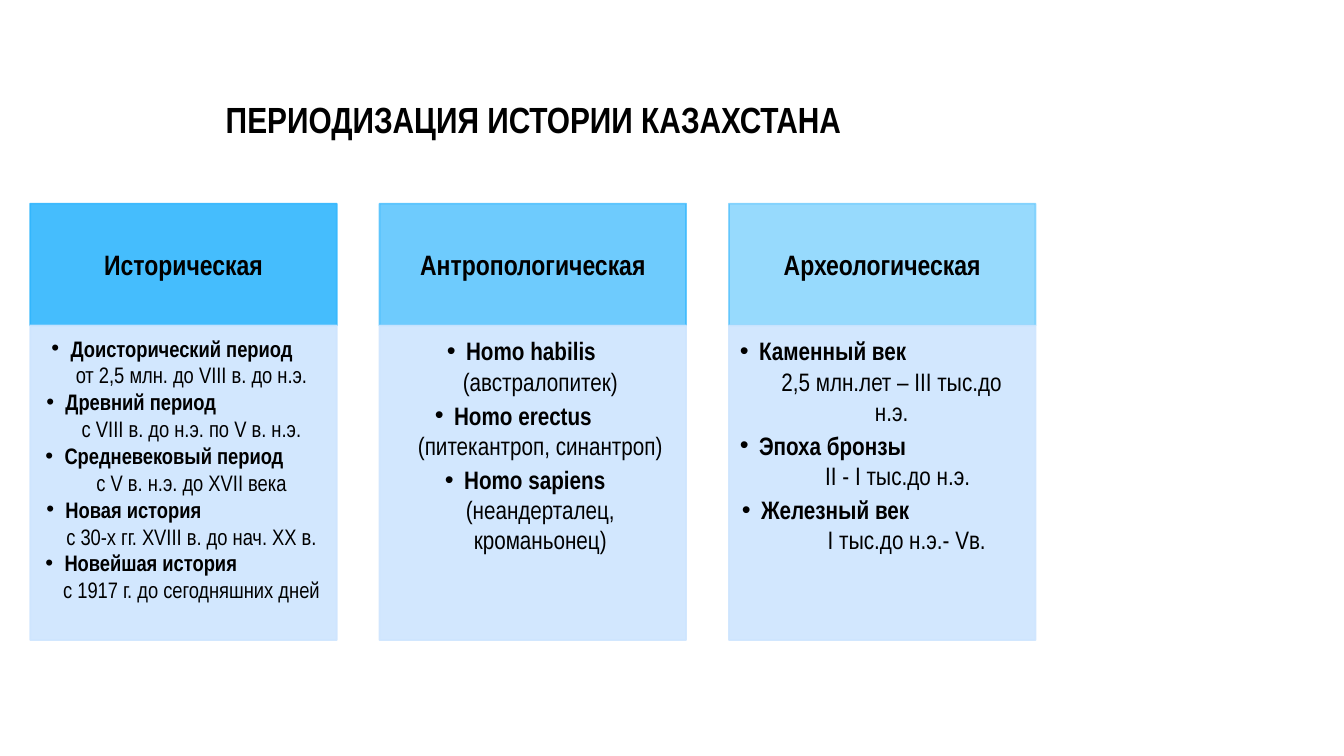
from dataclasses import dataclass

from lxml.etree import SubElement
from pptx import Presentation
from pptx.dml.color import RGBColor
from pptx.enum.shapes import MSO_SHAPE
from pptx.enum.text import MSO_ANCHOR, MSO_AUTO_SIZE, PP_ALIGN
from pptx.oxml.ns import qn
from pptx.util import Inches, Pt

FONT = "Arial Narrow"
COLORS = {"header": "31B6FD", "body": "CEE5FE", "text": "000000"}

# Card grid, in inches
FIRST_LEFT, COLUMN_STEP, CARD_WIDTH = 0.3, 3.465, 3.04
HEADER_TOP, HEADER_HEIGHT = 2.02, 1.21
BODY_HEIGHT = 3.12
BULLET_GAP = 0.19


@dataclass
class Period:
    name: str
    detail: str
    name_left: float  # from the left edge of the card
    detail_shift: float = 0


@dataclass
class Column:
    heading: str
    header_opacity: int
    text_size: int
    space_after: float
    margins: tuple[float, float, float, float]
    periods: list[Period]


COLUMNS = [
    Column("Историческая", 90, 16, 0, (0.09, 0.09, 0.12, 0.14), [
        Period("Доисторический период", "от 2,5 млн. до VIII в. до н.э.", 0.4),
        Period("Древний период", "с VIII в. до н.э. по V в. н.э.", 0.35),
        Period("Средневековый период", "с V в. н.э. до XVII века", 0.34),
        Period("Новая история", "с 30-х гг. XVIII в. до нач. ХХ в.", 0.35),
        Period("Новейшая история", "с 1917 г. до сегодняшних дней", 0.34),
    ]),
    Column("Антропологическая", 70, 18, 2.7, (0.1, 0.1, 0.14, 0.16), [
        Period("Homo habilis", "(австралопитек)", 0.86),
        Period("Homo erectus", "(питекантроп, синантроп)", 0.74),
        Period("Homo sapiens", "(неандерталец, кроманьонец)", 0.84),
    ]),
    Column("Археологическая", 50, 18, 2.7, (0.1, 0.1, 0.14, 0.16), [
        Period("Каменный век", "2,5 млн.лет – III тыс.до\vн.э.", 0.3, 0.04),
        Period("Эпоха бронзы", "II - I тыс.до н.э.", 0.3, 0.16),
        Period("Железный век", "I тыс.до н.э.- Vв.", 0.32, 0.34),
    ]),
]


def set_margins(text_frame, left: float, top: float, right: float, bottom: float) -> None:
    text_frame.margin_left = Inches(left)
    text_frame.margin_top = Inches(top)
    text_frame.margin_right = Inches(right)
    text_frame.margin_bottom = Inches(bottom)


def format_runs(paragraph, size: int, bold: bool) -> None:
    for run in paragraph.runs:
        run.font.name = FONT
        run.font.size = Pt(size)
        run.font.bold = bold
        run.font.color.rgb = RGBColor.from_string(COLORS["text"])


def set_indent(paragraph, left: float, bullet: bool = False) -> None:
    properties = paragraph._p.get_or_add_pPr()
    properties.set("marL", str(Inches(left)))
    if bullet:
        properties.set("indent", str(-Inches(BULLET_GAP)))
        SubElement(properties, qn("a:buFont")).set("typeface", "Arial")
        SubElement(properties, qn("a:buChar")).set("char", "•")


def add_panel(slide, left: float, top: float, height: float, color: str, opacity: int):
    panel = slide.shapes.add_shape(
        MSO_SHAPE.RECTANGLE, Inches(left), Inches(top), Inches(CARD_WIDTH), Inches(height))
    panel.shadow.inherit = False
    panel.fill.solid()
    panel.line.width = Pt(1.25)
    for fill in (panel.fill, panel.line.fill):
        fill.solid()
        fill.fore_color.rgb = RGBColor.from_string(color)
    for color_element in panel._element.spPr.iter(qn("a:srgbClr")):
        SubElement(color_element, qn("a:alpha")).set("val", str(opacity * 1000))
    panel.text_frame.word_wrap = True
    return panel


def add_header(slide, column: Column, left: float) -> None:
    header = add_panel(slide, left, HEADER_TOP, HEADER_HEIGHT,
                       COLORS["header"], column.header_opacity)
    text_frame = header.text_frame
    set_margins(text_frame, 0.16, 0.09, 0.16, 0.09)
    text_frame.vertical_anchor = MSO_ANCHOR.MIDDLE
    text_frame.text = column.heading
    paragraph = text_frame.paragraphs[0]
    paragraph.alignment = PP_ALIGN.CENTER
    format_runs(paragraph, 20, True)


def add_body(slide, column: Column, left: float) -> None:
    body = add_panel(slide, left, HEADER_TOP + HEADER_HEIGHT, BODY_HEIGHT, COLORS["body"], 90)
    text_frame = body.text_frame
    set_margins(text_frame, *column.margins)
    text_frame.vertical_anchor = MSO_ANCHOR.TOP
    for index, period in enumerate(column.periods):
        name = text_frame.add_paragraph() if index else text_frame.paragraphs[0]
        name.text = period.name
        name.alignment = PP_ALIGN.LEFT
        set_indent(name, period.name_left - column.margins[0], bullet=True)
        format_runs(name, column.text_size, True)

        detail = text_frame.add_paragraph()
        detail.text = period.detail
        detail.alignment = PP_ALIGN.CENTER
        detail.space_after = Pt(column.space_after)
        set_indent(detail, BULLET_GAP + period.detail_shift)
        format_runs(detail, column.text_size, False)


def add_title(slide, text: str) -> None:
    title = slide.shapes.title
    title.left, title.top = Inches(1.5), Inches(0.74)
    title.width, title.height = Inches(7.59), Inches(0.87)
    text_frame = title.text_frame
    text_frame.text = text
    text_frame.word_wrap = True
    text_frame.auto_size = MSO_AUTO_SIZE.NONE
    text_frame.vertical_anchor = MSO_ANCHOR.MIDDLE
    set_margins(text_frame, 0.07, 0.04, 0.07, 0.04)
    paragraph = text_frame.paragraphs[0]
    paragraph.alignment = PP_ALIGN.CENTER
    format_runs(paragraph, 26, True)


def main() -> None:
    presentation = Presentation()
    presentation.slide_width = Inches(13.33)
    presentation.slide_height = Inches(7.5)
    slide = presentation.slides.add_slide(presentation.slide_layouts.get_by_name("Title Only"))

    add_title(slide, "ПЕРИОДИЗАЦИЯ ИСТОРИИ КАЗАХСТАНА")

    # Three columns: heading panel above a list of periods
    for index, column in enumerate(COLUMNS):
        left = FIRST_LEFT + index * COLUMN_STEP
        add_header(slide, column, left)
        add_body(slide, column, left)

    presentation.save("out.pptx")


if __name__ == "__main__":
    main()
